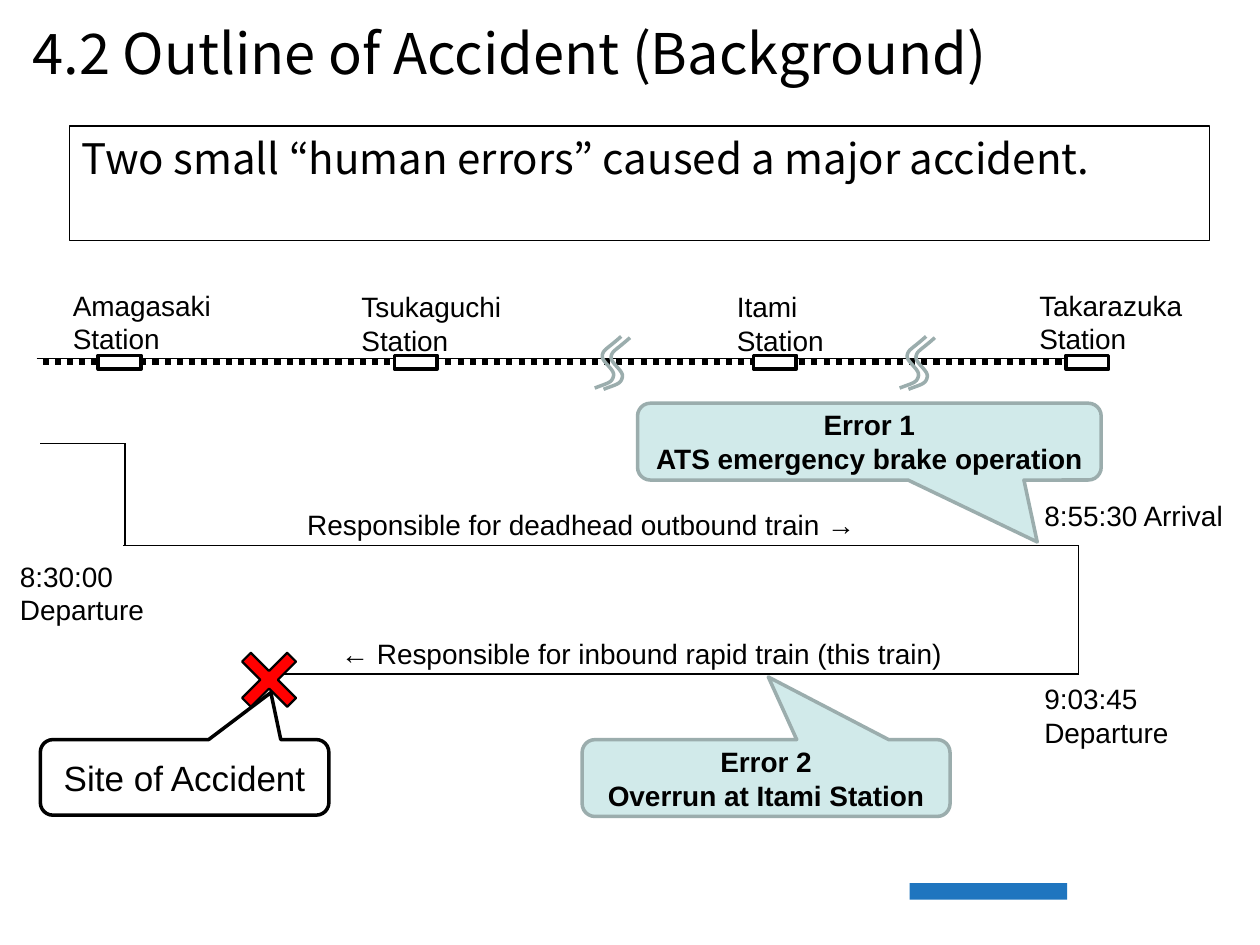
from dataclasses import dataclass
from typing import Optional

from lxml import etree
from pptx import Presentation
from pptx import util as u
from pptx.dml.color import RGBColor
from pptx.enum import dml, shapes, text
from pptx.oxml.ns import qn


@dataclass(frozen=True)
class Theme:
    black: str = "000000"
    white: str = "FFFFFF"
    error_fill: str = "D1EAEA"
    grey: str = "9BADAD"
    red: str = "FF0000"
    blue: str = "1F75BF"
    heading_font: str = "Noto Sans CJK JP"
    body_font: str = "Arial"
    title: int = 32
    message: int = 24
    site: int = 20
    label: int = 16


@dataclass(frozen=True)
class Box:
    left: float
    top: float
    width: float
    height: float

    def emu(self) -> list:
        return [u.Inches(v) for v in (self.left, self.top, self.width, self.height)]


@dataclass(frozen=True)
class Label:
    words: str
    box: Box


@dataclass(frozen=True)
class Callout:
    words: str
    box: Box
    tip: tuple
    line: str
    size: int
    fill: Optional[str] = None
    bold: bool = False


THEME = Theme()

STATION_LABELS = [
    Label("Amagasaki Station", Box(0.48, 2.24, 1.37, 0.64)),
    Label("Tsukaguchi Station", Box(2.77, 2.25, 1.62, 0.64)),
    Label("Itami Station", Box(5.75, 2.25, 1.26, 0.64)),
    Label("Takarazuka Station", Box(8.15, 2.24, 1.37, 0.64)),
]
STATION_LEFTS = [0.78, 3.13, 5.98, 8.46]

RUN_LABELS = [
    Label("8:55:30 Arrival", Box(8.19, 3.91, 1.84, 0.37)),
    Label("9:03:45 Departure", Box(8.19, 5.36, 1.84, 0.64)),
    Label("8:30:00 Departure", Box(0.06, 4.39, 1.84, 0.64)),
    Label("Responsible for deadhead outbound train →", Box(2.34, 3.98, 4.8, 0.37)),
    Label("← Responsible for inbound rapid train (this train)", Box(2.61, 5, 5.38, 0.37)),
]
RUN_LINES = [
    ((0.98, 4.33), (8.56, 4.33)),
    ((2.22, 5.35), (8.56, 5.35)),
    ((8.56, 5.35), (8.56, 4.33)),
    ((0.99, 4.33), (0.99, 3.52)),
    ((0.32, 3.52), (0.99, 3.52)),
]

ERRORS = [
    Callout("Error 1\nATS emergency brake operation", Box(5.06, 3.2, 3.68, 0.61),
            (0.362, 1.306), THEME.grey, THEME.label, THEME.error_fill, True),
    Callout("Error 2\nOverrun at Itami Station", Box(4.62, 5.87, 2.92, 0.61),
            (0.006, -1.316), THEME.grey, THEME.label, THEME.error_fill, True),
]
SITE = Callout("Site of Accident", Box(0.32, 5.87, 2.29, 0.6),
               (0.299, -1.122), THEME.black, THEME.site)

# Cubic curves of one break mark: each row adds two handles and an end point.
BREAK_START = (4.93, 2.67)
BREAK_CURVES = [
    ((4.82, 2.77), (4.79, 2.77), (4.78, 2.82)),
    ((4.77, 2.87), (4.88, 2.93), (4.87, 2.98)),
    ((4.86, 3.04), (4.82, 3.04), (4.72, 3.08)),
]
BREAK_GAP = 2.42
BREAK_PAIR = [(0, 0), (0.07, 0.01)]


def rgb(value: str) -> RGBColor:
    return RGBColor.from_string(value)


def write(frame, words: str, size: int, font: str = THEME.body_font,
          bold: bool = False, align=text.PP_ALIGN.LEFT) -> None:
    frame.word_wrap = True
    frame.text = words
    for paragraph in frame.paragraphs:
        paragraph.alignment = align
        for run in paragraph.runs:
            run.font.name = font
            run.font.size = u.Pt(size)
            run.font.bold = bold
            run.font.color.rgb = rgb(THEME.black)


def paint(shape, fill: Optional[str], line: Optional[str], width: float = 1) -> None:
    shape.shadow.inherit = False
    if fill:
        shape.fill.solid()
        shape.fill.fore_color.rgb = rgb(fill)
    else:
        shape.fill.background()
    if line:
        shape.line.color.rgb = rgb(line)
        shape.line.width = u.Pt(width)
    else:
        shape.line.fill.background()


def add_label(slide, label: Label, size: int = THEME.label,
              font: str = THEME.body_font) -> None:
    write(slide.shapes.add_textbox(*label.box.emu()).text_frame, label.words, size, font)


def add_preset(slide, kind, box: Box, fill: Optional[str], line: Optional[str],
               width: float = 1):
    shape = slide.shapes.add_shape(kind, *box.emu())
    paint(shape, fill, line, width)
    return shape


def add_line(slide, start: tuple, end: tuple, color: str, width: float, dash=None) -> None:
    line = slide.shapes.add_connector(
        shapes.MSO_CONNECTOR.STRAIGHT, *[u.Inches(v) for v in (*start, *end)])
    line.line.color.rgb = rgb(color)
    line.line.width = u.Pt(width)
    if dash:
        line.line.dash_style = dash
    etree.SubElement(line._element.spPr, qn("a:effectLst"))


def add_callout(slide, callout: Callout) -> None:
    shape = add_preset(slide, shapes.MSO_SHAPE.ROUNDED_RECTANGULAR_CALLOUT,
                       callout.box, callout.fill, callout.line, 2)
    shape.adjustments[0], shape.adjustments[1] = callout.tip
    shape.text_frame.vertical_anchor = text.MSO_ANCHOR.MIDDLE
    write(shape.text_frame, callout.words, callout.size, bold=callout.bold,
          align=text.PP_ALIGN.CENTER)


def curve_points(start: tuple, curves: list, steps: int = 10) -> list:
    """Sample a chain of cubic curves into points."""
    points = [start]
    for handle_a, handle_b, end in curves:
        origin = points[-1]
        for t in (step / steps for step in range(1, steps + 1)):
            weights = ((1 - t) ** 3, 3 * t * (1 - t) ** 2, 3 * t * t * (1 - t), t ** 3)
            corners = (origin, handle_a, handle_b, end)
            points.append(tuple(sum(w * c[axis] for w, c in zip(weights, corners))
                                for axis in (0, 1)))
    return points


def add_break_stroke(slide, dx: float, dy: float) -> None:
    points = [(u.Inches(x + dx), u.Inches(y + dy))
              for x, y in curve_points(BREAK_START, BREAK_CURVES)]
    builder = slide.shapes.build_freeform(*points[0])
    builder.add_line_segments(points[1:], close=False)
    paint(builder.convert_to_shape(), None, THEME.grey, 2)


def main() -> None:
    deck = Presentation()
    deck.slide_width, deck.slide_height = u.Inches(10), u.Inches(7.5)
    slide = deck.slides.add_slide(deck.slide_layouts[6])
    rectangle = shapes.MSO_SHAPE.RECTANGLE

    add_preset(slide, rectangle, Box(7.22, 7.01, 1.25, 0.13), THEME.blue, None)
    add_label(slide, Label("4.2 Outline of Accident (Background)", Box(0.16, 0.1, 9.91, 0.89)),
              THEME.title, THEME.heading_font)
    message = add_preset(slide, rectangle, Box(0.55, 1, 9.05, 0.91), None, THEME.black, 0.75)
    message.text_frame.vertical_anchor = text.MSO_ANCHOR.TOP
    write(message.text_frame, "Two small “human errors” caused a major accident.",
          THEME.message, THEME.heading_font)

    rail = ((0.29, 2.87), (8.46, 2.87))
    add_line(slide, *rail, THEME.black, 4.25)
    add_line(slide, *rail, THEME.white, 3.5, dml.MSO_LINE.ROUND_DOT)
    for left in STATION_LEFTS:
        add_preset(slide, rectangle, Box(left, 2.82, 0.34, 0.11), THEME.white, THEME.black, 2)
    for label in STATION_LABELS:
        add_label(slide, label)
    for gap in (0, BREAK_GAP):
        for dx, dy in BREAK_PAIR:
            add_break_stroke(slide, gap + dx, dy)

    for start, end in RUN_LINES:
        add_line(slide, start, end, THEME.black, 1)
    for error in ERRORS:
        add_callout(slide, error)
    cross = add_preset(slide, shapes.MSO_SHAPE.MATH_MULTIPLY, Box(1.79, 5.05, 0.69, 0.69),
                       THEME.red, THEME.black, 1.25)
    cross.adjustments[0] = 0.143
    add_callout(slide, SITE)
    for label in RUN_LABELS:
        add_label(slide, label)

    deck.save("out.pptx")


if __name__ == "__main__":
    main()
